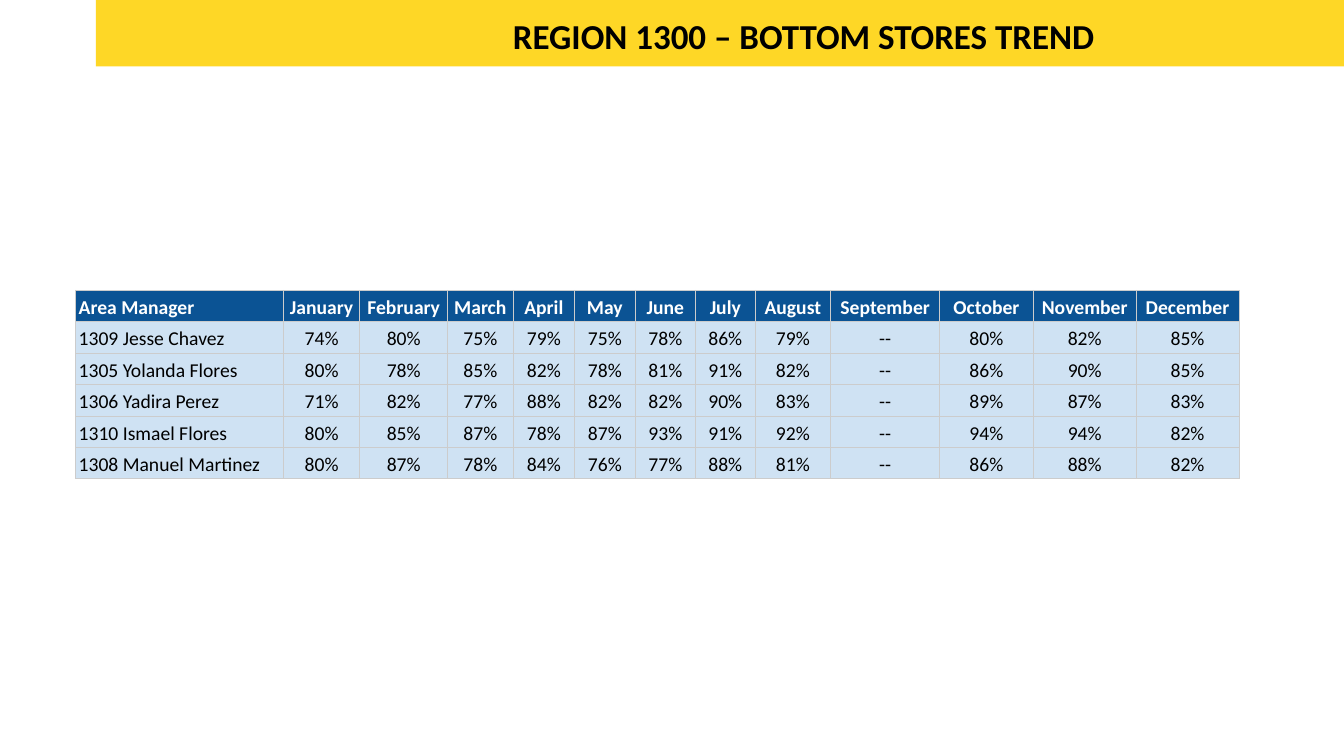
from lxml.etree import SubElement
from pptx import Presentation
from pptx.dml.color import RGBColor
from pptx.enum.shapes import MSO_SHAPE
from pptx.enum.text import MSO_ANCHOR, MSO_AUTO_SIZE, PP_ALIGN
from pptx.oxml.ns import qn
from pptx.util import Pt

PX = 9144  # 100 px to the inch
FONT = "Calibri"
YELLOW = RGBColor(0xFE, 0xD7, 0x26)
NAVY = RGBColor(0x0B, 0x53, 0x94)
PALE_BLUE = RGBColor(0xCF, 0xE2, 0xF3)
GRID = RGBColor(0xCC, 0xCC, 0xCC)
BLACK = RGBColor(0, 0, 0)
WHITE = RGBColor(0xFF, 0xFF, 0xFF)

HEADER = ["Area Manager", "January", "February", "March", "April", "May", "June",
          "July", "August", "September", "October", "November", "December"]
COL_WIDTHS = [206, 76, 87, 65, 61, 60, 60, 59, 75, 108, 93, 102, 102]
# Monthly percentages per manager; None where there is no result
MANAGERS = [
    ("1309 Jesse Chavez", [74, 80, 75, 79, 75, 78, 86, 79, None, 80, 82, 85]),
    ("1305 Yolanda Flores", [80, 78, 85, 82, 78, 81, 91, 82, None, 86, 90, 85]),
    ("1306 Yadira Perez", [71, 82, 77, 88, 82, 82, 90, 83, None, 89, 87, 83]),
    ("1310 Ismael Flores", [80, 85, 87, 78, 87, 93, 91, 92, None, 94, 94, 82]),
    ("1308 Manuel Martinez", [80, 87, 78, 84, 76, 77, 88, 81, None, 86, 88, 82]),
]


class SlideBuilder:
    def __init__(self, prs):
        self.s = prs.slides.add_slide(prs.slide_layouts[5])

    def run(self, p, text, size, color, bold, align):
        p.alignment = align
        r = p.add_run()
        r.text = text
        r.font.name = FONT
        r.font.size = Pt(size)
        r.font.bold = bold
        r.font.color.rgb = color

    def title(self, text, x, y, w, h):
        sp = self.s.shapes.title
        sp.left, sp.top, sp.width, sp.height = [v * PX for v in (x, y, w, h)]
        tf = sp.text_frame
        tf.word_wrap = True
        tf.auto_size = MSO_AUTO_SIZE.NONE
        tf.vertical_anchor = MSO_ANCHOR.MIDDLE
        self.run(tf.paragraphs[0], text, 25, BLACK, True, PP_ALIGN.CENTER)

    def band(self, x, y, w, h):
        sp = self.s.shapes.add_shape(
            MSO_SHAPE.RECTANGLE, x * PX, y * PX, w * PX, h * PX)
        sp.shadow.inherit = False
        sp.fill.solid()
        sp.fill.fore_color.rgb = YELLOW
        sp.line.fill.background()
        # Keep the band behind the title
        self.s.shapes.title.element.addprevious(sp.element)

    def borders(self, cell):
        tcPr = cell._tc.get_or_add_tcPr()
        for side in ("a:lnL", "a:lnR", "a:lnT", "a:lnB"):
            ln = SubElement(tcPr, qn(side), w=str(Pt(0.75)))
            fill = SubElement(ln, qn("a:solidFill"))
            SubElement(fill, qn("a:srgbClr"), val=str(GRID))

    def cell(self, cell, text, fill, color, bold, align):
        cell.margin_left = cell.margin_right = 3 * PX
        cell.margin_top = cell.margin_bottom = 2 * PX
        cell.vertical_anchor = MSO_ANCHOR.BOTTOM
        self.borders(cell)
        cell.fill.solid()
        cell.fill.fore_color.rgb = fill
        p = cell.text_frame.paragraphs[0]
        p.line_spacing = 1.15
        self.run(p, text, 14, color, bold, align)

    def table(self, rows, widths, x, y, row_h):
        frame = self.s.shapes.add_table(
            len(rows), len(widths), x * PX, y * PX,
            sum(widths) * PX, len(rows) * row_h * PX)
        tbl = frame.table
        tbl.first_row = tbl.horz_banding = False
        for col, width in zip(tbl.columns, widths):
            col.width = width * PX
        for i, row in enumerate(rows):
            look = (PALE_BLUE, BLACK, False) if i else (NAVY, WHITE, True)
            for j, text in enumerate(row):
                align = PP_ALIGN.CENTER if j else PP_ALIGN.LEFT
                self.cell(tbl.cell(i, j), text, *look, align)


def main():
    prs = Presentation()
    prs.slide_width, prs.slide_height = 1333 * PX, 750 * PX
    slide = SlideBuilder(prs)

    # Title on its yellow band
    slide.title("REGION 1300 – BOTTOM STORES TREND", 261, 9, 1072, 52)
    slide.band(95, 0, 1238, 66)

    # Monthly trend by area manager
    rows = [HEADER]
    for name, scores in MANAGERS:
        rows.append([name] + ["--" if v is None else f"{v}%" for v in scores])
    slide.table(rows, COL_WIDTHS, 75, 288, 28)

    prs.save("out.pptx")


if __name__ == "__main__":
    main()
